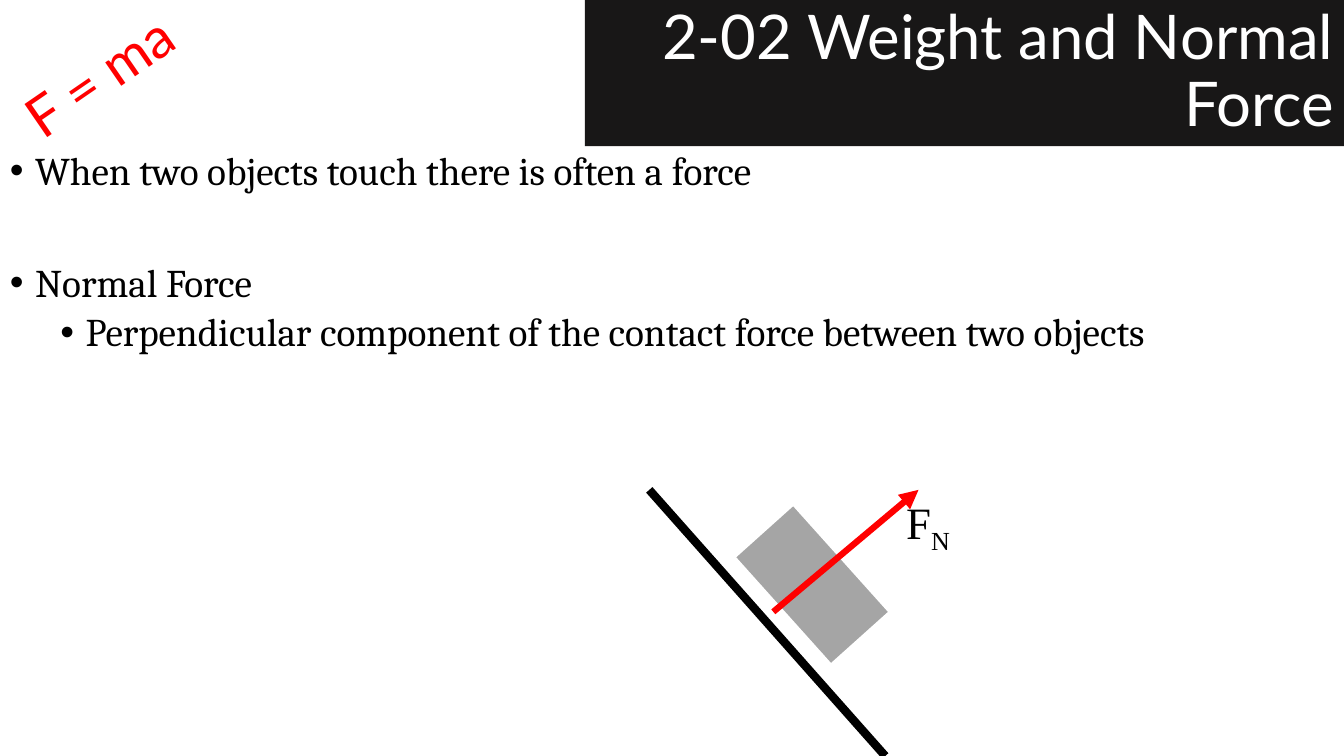
from lxml.etree import SubElement
from pptx import Presentation
from pptx.dml.color import RGBColor
from pptx.enum.shapes import MSO_CONNECTOR, MSO_SHAPE
from pptx.enum.text import MSO_ANCHOR, MSO_AUTO_SIZE, PP_ALIGN
from pptx.oxml.ns import qn
from pptx.util import Inches, Pt

COLORS = {
    "banner": "181717",
    "white": "FFFFFF",
    "black": "000000",
    "block": "A5A5A5",
    "force": "FF0000",
}
BULLETS = [
    ("When two objects touch there is often a force", 0, 0),
    ("Normal Force", 0, 50),
    ("Perpendicular component of the contact force between two objects", 1, 5),
]


def color(name):
    return RGBColor.from_string(COLORS[name])


def set_font(font, name, size, color_name):
    font.name = name
    font.size = Pt(size)
    font.color.rgb = color(color_name)


def add_text_box(page, left, top, width, height):
    box = page.shapes.add_textbox(Inches(left), Inches(top), Inches(width), Inches(height))
    box.text_frame.word_wrap = True
    return box


def add_title(page, left, top, width, height):
    title = page.shapes.title
    title.left, title.top = Inches(left), Inches(top)
    title.width, title.height = Inches(width), Inches(height)
    title.fill.solid()
    title.fill.fore_color.rgb = color("banner")
    frame = title.text_frame
    frame.text = "2-02 Weight and Normal Force"
    frame.word_wrap = True
    frame.auto_size = MSO_AUTO_SIZE.NONE
    frame.vertical_anchor = MSO_ANCHOR.MIDDLE
    para = frame.paragraphs[0]
    para.alignment = PP_ALIGN.RIGHT
    para.line_spacing = 0.9
    set_font(para.font, "Lato", 44, "white")


def add_bullets(page, left, top, width, height):
    frame = add_text_box(page, left, top, width, height).text_frame
    for index, (text, level, space) in enumerate(BULLETS):
        para = frame.add_paragraph() if index else frame.paragraphs[0]
        para.text = text
        para.level = level
        para.line_spacing = 0.9
        para.space_before = Pt(space)
        properties = para._p.get_or_add_pPr()
        properties.set("marL", str(Inches(0.25 + 0.5 * level)))
        properties.set("indent", str(Inches(-0.25)))
        SubElement(properties, qn("a:buFont"), typeface="Arial")
        SubElement(properties, qn("a:buChar"), char="•")
        set_font(para.font, "Cambria", 28, "black")


def add_line(page, start, end, color_name, weight):
    points = [Inches(value) for value in (*start, *end)]
    line = page.shapes.add_connector(MSO_CONNECTOR.STRAIGHT, *points)
    line.line.color.rgb = color(color_name)
    line.line.width = Pt(weight)
    SubElement(line._element.spPr, qn("a:effectLst"))
    return line


def add_incline(page, left, top, width, height):
    block = page.shapes.add_shape(
        MSO_SHAPE.RECTANGLE, Inches(left + 0.9), Inches(top + 0.55), Inches(1.43), Inches(0.78)
    )
    block.rotation = 48.1
    block.shadow.inherit = False
    block.fill.solid()
    block.fill.fore_color.rgb = color("block")
    block.line.color.rgb = color("white")
    block.line.width = Pt(1.5)

    add_line(page, (left, top), (left + width, top + height), "black", 6)
    arrow = add_line(page, (left + 1.23, top + 1.21), (left + 2.67, top), "force", 4.5)
    SubElement(arrow.line._get_or_add_ln(), qn("a:tailEnd"), type="triangle")

    label = add_text_box(page, left + 2.45, top, 1.33, 0.64)
    para = label.text_frame.paragraphs[0]
    para.add_run().text = "F"
    subscript = para.add_run()
    subscript.text = "N"
    subscript.font._element.set("baseline", "-25000")
    set_font(para.font, "Times New Roman", 32, "black")


def add_formula(page, left, top, width, height):
    box = add_text_box(page, left, top, width, height)
    box.rotation = 325.5
    para = box.text_frame.paragraphs[0]
    para.text = "F = ma"
    set_font(para.font, "Lato", 40, "force")


def main():
    deck = Presentation()
    deck.slide_width, deck.slide_height = Inches(13.33), Inches(7.5)
    page = deck.slides.add_slide(deck.slide_layouts[5])
    add_title(page, 5.8, 0, 7.53, 1.45)
    add_bullets(page, 0, 1.45, 13.33, 5.65)
    add_incline(page, 6.44, 4.86, 2.34, 2.64)
    add_formula(page, 0.02, 0.23, 2.31, 0.77)
    deck.save("out.pptx")


if __name__ == "__main__":
    main()
